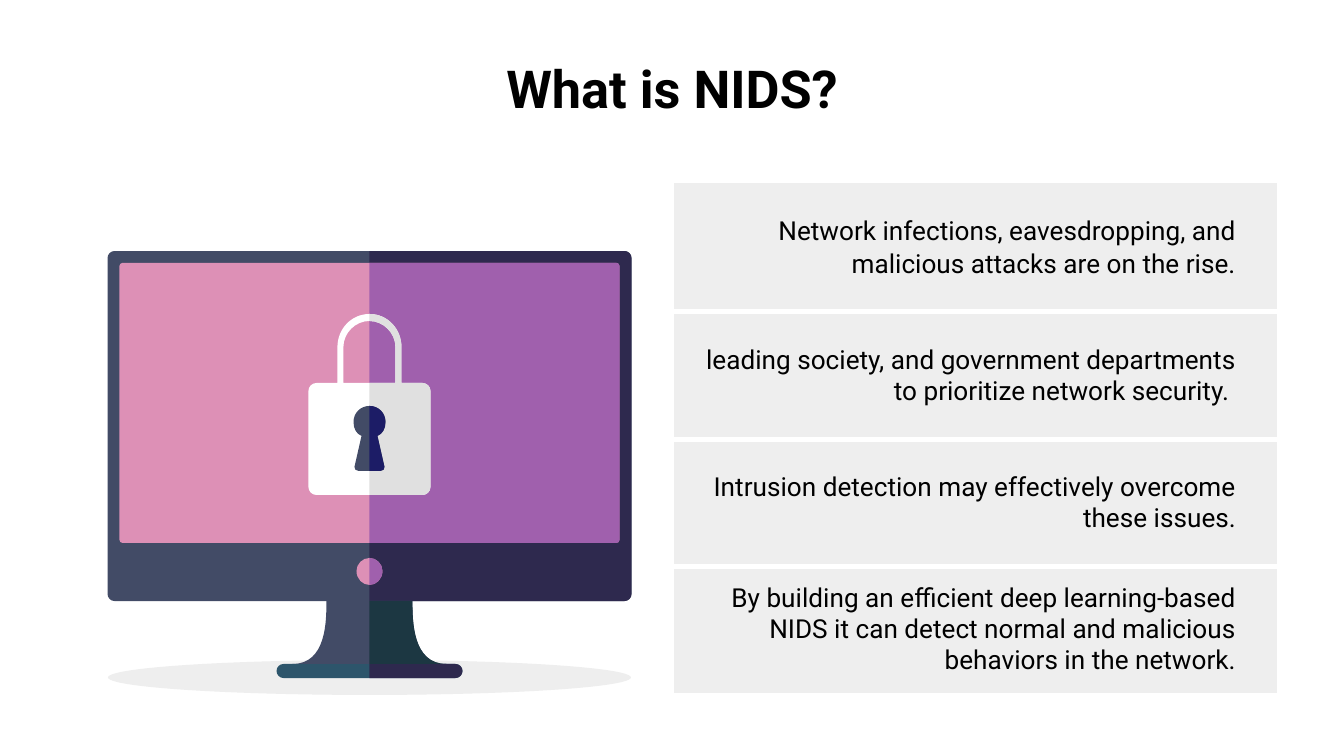
from lxml import etree
from pptx import Presentation
from pptx.dml.color import RGBColor
from pptx.enum.shapes import MSO_SHAPE
from pptx.enum.text import MSO_ANCHOR, PP_ALIGN
from pptx.oxml.ns import qn
from pptx.util import Pt

PX = 914400 / 134.4
SLIDE_W, SLIDE_H = 1344, 756
OVAL = MSO_SHAPE.OVAL
MIDDLE = MSO_ANCHOR.MIDDLE
CENTER, RIGHT = PP_ALIGN.CENTER, PP_ALIGN.RIGHT
FONT = "Roboto"

TITLE = "What is NIDS?"
TITLE_BOX = (67, 43, 1210, 85)

# Text, row height and paragraph spacing
POINTS = [
    ("Network infections, eavesdropping, and malicious attacks are on the rise.",
     129, {"line_spacing": 1.07, "space_before": Pt(6)}),
    ("leading society, and government departments to prioritize network security. ",
     128, {}),
    ("Intrusion detection may effectively overcome these issues.", 127, {}),
    ("By building an efficient deep learning-based NIDS it can detect normal "
     "and malicious behaviors in the network.", 126, {}),
]
TABLE_LEFT, TABLE_TOP, TABLE_W = 672, 183, 605
CELL_INSETS = {"margin_left": 27, "margin_top": 13,
               "margin_right": 41, "margin_bottom": 13}
CELL_FILL, BORDER_COLOR, BORDER_PT = "EEEEEE", "FFFFFF", 3

AXIS = 369.5
GROUND_SHADOW = (108, 660, 523, 35)


def rounded(half_width, top, bottom, radius):
    """Right half of a rounded box, as steps from its top to its bottom."""
    k = radius * 0.45
    inner = half_width - radius
    return [(0, top), (inner, top),
            (half_width - k, top, half_width, top + k, half_width, top + radius),
            (half_width, bottom - radius),
            (half_width, bottom - k, half_width - k, bottom, inner, bottom),
            (0, bottom)]


# Right halves: (x from axis, y) is a line, six numbers are a Bezier curve
BUTTON = [(0, 558), (7, 558, 13, 564, 13, 571), (13, 579, 7, 585, 0, 585)]
STAND = [(0, 601), (43, 601), (43, 621, 43, 664, 77, 664), (0, 664)]
SHACKLE = [(0, 314), (18, 314, 32, 329, 32, 347), (32, 383)]
LOCK = SHACKLE + rounded(61, 383, 495, 8)[1:]
LOCK_HOLE = [(0, 321), (14, 321, 26, 333, 26, 347), (26, 383), (0, 383)]
KEYHOLE = [(0, 406), (9, 406, 16, 413, 16, 422), (16, 429, 13, 434, 8, 436),
           (15, 467), (15, 469, 14, 471, 11, 471), (0, 471)]

# Outline, hole, left colour, right colour
COMPUTER = [
    (rounded(262, 251, 601, 7), [], "424B66", "2E294E"),
    (rounded(250, 263, 543, 3), [], "DD90B6", "A060AD"),
    (rounded(93, 664, 678, 7), [], "2D556B", "2E294E"),
    (STAND, [], "424B66", "1C3742"),
    (BUTTON, [], "DD90B6", "A060AD"),
    (LOCK, LOCK_HOLE, "FFFFFF", "E0E0E0"),
    (KEYHOLE, [], "424B66", "1C1C66"),
]


def emu(px):
    return round(px * PX)


def rgb(value):
    return RGBColor.from_string(value)


def write(frame, text, size=14, color="000000", bold=False, align=RIGHT, **spacing):
    frame.word_wrap = True
    paragraph = frame.paragraphs[0]
    paragraph.alignment = align
    for name, value in spacing.items():
        setattr(paragraph, name, value)
    run = paragraph.add_run()
    run.text = text
    run.font.name, run.font.size, run.font.bold = FONT, Pt(size), bold
    run.font.color.rgb = rgb(color)


def paint(shape, color):
    shape.shadow.inherit = False
    shape.fill.solid()
    shape.fill.fore_color.rgb = rgb(color)
    shape.line.fill.background()


def nodes(steps):
    """Turn steps into (x, y, is_control) nodes."""
    return [(*step[i:i + 2], i + 2 < len(step))
            for step in steps for i in range(0, len(step), 2)]


def mirrored(half):
    return half + [(-x, y, control) for x, y, control in reversed(half[:-1])]


def bend(shape, contours):
    """Merge each pair of control points and its end point into a curve."""
    segments = [s for tag in ("a:moveTo", "a:lnTo")
                for s in shape._element.iter(qn(tag))]
    outline = segments[0].getparent()
    segments = [s for s in outline if s.tag != qn("a:close")]
    controls = [control for contour in contours for _, _, control in contour]
    curve = None
    for segment, control in zip(segments, controls):
        if control and curve is None:
            curve = etree.Element(qn("a:cubicBezTo"))
            outline.replace(segment, curve)
        elif curve is not None:
            outline.remove(segment)
        if curve is not None:
            curve.append(segment[0])
        if not control:
            curve = None


def draw_contours(shapes, contours, color):
    placed = [[(emu(AXIS + x), emu(y)) for x, y, _ in contour] for contour in contours]
    builder = shapes.build_freeform(*placed[0][0], scale=1.0)
    for i, contour in enumerate(placed):
        if i:
            builder.move_to(*contour[0])
        builder.add_line_segments(contour[1:], close=False)
    shape = builder.convert_to_shape()
    bend(shape, contours)
    paint(shape, color)


def add_computer(slide):
    shapes = slide.shapes.add_group_shape().shapes
    paint(shapes.add_shape(OVAL, *map(emu, GROUND_SHADOW)), "EEEEEE")
    for outline, hole, left_color, right_color in COMPUTER:
        outer, inner = nodes(outline), nodes(hole)
        whole = [mirrored(half) for half in (outer, inner) if half]
        draw_contours(shapes, whole, left_color)
        draw_contours(shapes, [outer + inner[::-1] + outer[:1]], right_color)


def border(side, visible):
    line = etree.Element(qn(f"a:ln{side}"), w=str(Pt(BORDER_PT)))
    if visible:
        fill = etree.SubElement(line, qn("a:solidFill"))
        etree.SubElement(fill, qn("a:srgbClr"), val=BORDER_COLOR)
    else:
        etree.SubElement(line, qn("a:noFill"))
    return line


def add_points(slide):
    height = sum(row_height for _, row_height, _ in POINTS)
    table = slide.shapes.add_table(
        len(POINTS), 1, *map(emu, (TABLE_LEFT, TABLE_TOP, TABLE_W, height))).table
    table.first_row = table.horz_banding = False
    last = len(POINTS) - 1
    for i, (text, row_height, spacing) in enumerate(POINTS):
        table.rows[i].height = emu(row_height)
        cell = table.cell(i, 0)
        cell.vertical_anchor = MIDDLE
        for margin, px in CELL_INSETS.items():
            setattr(cell, margin, emu(px))
        write(cell.text_frame, text, **spacing)
        cell.fill.solid()
        cell.fill.fore_color.rgb = rgb(CELL_FILL)
        sides = {"L": True, "R": False, "T": i > 0, "B": i < last}
        properties = cell._tc.get_or_add_tcPr()
        for position, (side, visible) in enumerate(sides.items()):
            properties.insert(position, border(side, visible))


def main():
    deck = Presentation()
    deck.slide_width, deck.slide_height = emu(SLIDE_W), emu(SLIDE_H)
    slide = deck.slides.add_slide(deck.slide_layouts[6])
    add_points(slide)
    title = slide.shapes.add_textbox(*map(emu, TITLE_BOX)).text_frame
    title.margin_left = title.margin_right = emu(13)
    title.margin_top = title.margin_bottom = emu(13)
    write(title, TITLE, size=28, bold=True, align=CENTER)
    add_computer(slide)
    deck.save("out.pptx")


if __name__ == "__main__":
    main()
